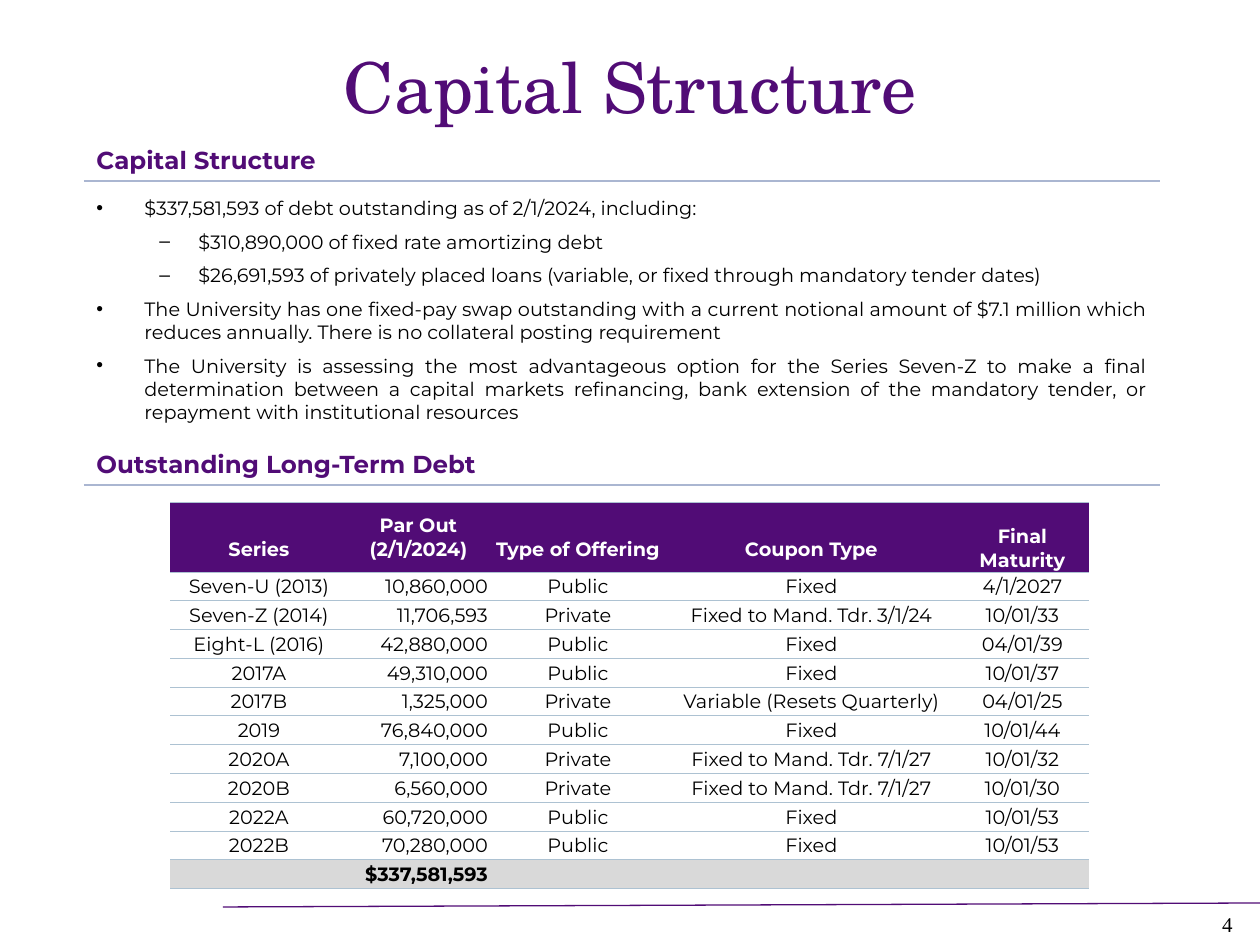
import pptx
import pptx.util
import pptx.dml.color
import pptx.enum.shapes
import pptx.enum.text
from lxml import etree
from pptx.oxml.ns import qn

SCALE = 914400 / 126
PURPLE, BLACK, WHITE = "510C76", "000000", "FFFFFF"
RULE, BORDER, GREY = "AAB6D1", "ADC2D2", "D9D9D9"
SANS = "Montserrat"
PLAIN = "{2D5ABB26-0587-4C30-8999-92F81FD0307C}"  # table style without lines
ALIGN = pptx.enum.text.PP_ALIGN
ANCHOR = pptx.enum.text.MSO_ANCHOR
LEFT, WIDE = 84, 1076

# Mark, start of text, hanging indent
LEVELS = [("•", 48, -48), ("–", 102, -39)]
POINTS = [
    (0, "$337,581,593 of debt outstanding as of 2/1/2024, including:"),
    (1, "$310,890,000 of fixed rate amortizing debt"),
    (1, "$26,691,593 of privately placed loans (variable, or fixed through "
        "mandatory tender dates)"),
    (0, "The University has one fixed-pay swap outstanding with a current "
        "notional amount of $7.1 million which reduces annually. There is no "
        "collateral posting requirement"),
    (0, "The University is assessing the most advantageous option for the "
        "Series Seven-Z to make a final determination between a capital "
        "markets refinancing, bank extension of the mandatory tender, or "
        "repayment with institutional resources"),
]

HEADS = ["Series", "Par Out (2/1/2024)", "Type of Offering", "Coupon Type",
         "Final Maturity"]
DEBT = [
    ["Seven-U (2013)", "10,860,000", "Public", "Fixed", "4/1/2027"],
    ["Seven-Z (2014)", "11,706,593", "Private", "Fixed to Mand. Tdr. 3/1/24",
     "10/01/33"],
    ["Eight-L (2016)", "42,880,000", "Public", "Fixed", "04/01/39"],
    ["2017A", "49,310,000", "Public", "Fixed", "10/01/37"],
    ["2017B", "1,325,000", "Private", "Variable (Resets Quarterly)",
     "04/01/25"],
    ["2019", "76,840,000", "Public", "Fixed", "10/01/44"],
    ["2020A", "7,100,000", "Private", "Fixed to Mand. Tdr. 7/1/27",
     "10/01/32"],
    ["2020B", "6,560,000", "Private", "Fixed to Mand. Tdr. 7/1/27",
     "10/01/30"],
    ["2022A", "60,720,000", "Public", "Fixed", "10/01/53"],
    ["2022B", "70,280,000", "Public", "Fixed", "10/01/53"],
]
TOTAL = ["", "$337,581,593", "", "", ""]
COLS = [178, 141, 178, 289, 133]
TOP, TALL, HEAD = 502, 387, 70


def px(n):
    return pptx.util.Emu(round(n * SCALE))


def rgb(code):
    return pptx.dml.color.RGBColor.from_string(code)


def write(para, text, size=11, face=SANS, color=BLACK, bold=False,
          align=ALIGN.LEFT):
    para.alignment = align
    if not text:
        end = etree.SubElement(para._p, qn("a:endParaRPr"))
        end.set("sz", str(size * 100))
        return
    run = para.add_run()
    run.text = text
    run.font.size = pptx.util.Pt(size)
    run.font.name = face
    run.font.bold = bold
    run.font.color.rgb = rgb(color)


def box(slide, x, y, w, h, anchor=ANCHOR.TOP):
    frame = slide.shapes.add_textbox(px(x), px(y), px(w), px(h)).text_frame
    frame.word_wrap = True
    frame.vertical_anchor = anchor
    return frame


def line(slide, x1, y1, x2, y2, color):
    rule = slide.shapes.add_connector(
        pptx.enum.shapes.MSO_CONNECTOR.STRAIGHT, px(x1), px(y1), px(x2), px(y2))
    rule.line.color.rgb = rgb(color)
    rule.line.width = pptx.util.Pt(0.75)
    etree.SubElement(rule._element.spPr, qn("a:effectLst"))


def section(slide, text, y):
    frame = box(slide, LEFT, y, WIDE, 42, ANCHOR.BOTTOM)
    frame.margin_right = 0
    write(frame.paragraphs[0], text, size=14, color=PURPLE, bold=True)
    line(slide, LEFT, y + 42, LEFT + WIDE, y + 42, RULE)


def bullet(para, level):
    mark, start, hang = LEVELS[level]
    props = para._p.get_or_add_pPr()
    props.set("marL", str(px(start)))
    props.set("indent", str(px(hang)))
    etree.SubElement(props, qn("a:buFont")).set("typeface", "Arial")
    etree.SubElement(props, qn("a:buChar")).set("char", mark)
    para.level = level


def points(slide):
    frame = box(slide, LEFT, 190, WIDE, 223)
    for i, (level, text) in enumerate(POINTS):
        para = frame.add_paragraph() if i else frame.paragraphs[0]
        bullet(para, level)
        if i:
            para.space_before = pptx.util.Pt(6)
        write(para, text, align=ALIGN.JUSTIFY)


def edge(cell, side):
    ln = etree.SubElement(cell._tc.get_or_add_tcPr(), qn("a:" + side), w="6350")
    fill = etree.SubElement(ln, qn("a:solidFill"))
    etree.SubElement(fill, qn("a:srgbClr"), val=BORDER)


def fill(cell, text, back, low=0, anchor=ANCHOR.MIDDLE, **style):
    edge(cell, "lnT")
    edge(cell, "lnB")
    cell.fill.solid()
    cell.fill.fore_color.rgb = rgb(back)
    cell.margin_left = cell.margin_right = cell.margin_top = px(1)
    cell.margin_bottom = px(low)
    cell.vertical_anchor = anchor
    write(cell.text_frame.paragraphs[0], text, **style)


def table(slide):
    rows = [HEADS] + DEBT + [TOTAL]
    grid = slide.shapes.add_table(len(rows), len(COLS), px(170), px(TOP),
                                  px(sum(COLS)), px(TALL)).table
    grid._tbl.tblPr.find(qn("a:tableStyleId")).text = PLAIN
    for col, width in zip(grid.columns, COLS):
        col.width = px(width)
    for r, texts in enumerate(rows):
        grid.rows[r].height = px(HEAD if r == 0 else (TALL - HEAD) / (len(rows) - 1))
        for c, text in enumerate(texts):
            cell = grid.cell(r, c)
            if r == 0:
                low = 0 if text == "Final Maturity" else 11
                fill(cell, text, PURPLE, low, ANCHOR.BOTTOM, color=WHITE,
                     bold=True, align=ALIGN.CENTER)
            else:
                last = texts is TOTAL
                fill(cell, text, GREY if last else WHITE, bold=last,
                     align=ALIGN.RIGHT if c == 1 else ALIGN.CENTER)


def title(slide, text):
    head = slide.shapes.title
    head.left, head.top, head.width, head.height = map(px, (63, 38, 1134, 96))
    head.text_frame.vertical_anchor = ANCHOR.MIDDLE
    write(head.text_frame.paragraphs[0], text, size=40,
          face="TeX Gyre Schola", color=PURPLE, align=ALIGN.CENTER)


def main():
    deck = pptx.Presentation()
    deck.slide_width, deck.slide_height = px(1260), px(945)
    slide = deck.slides.add_slide(deck.slide_layouts[5])

    # Footer rule, title and page number
    line(slide, 223, 907, 1260, 903, PURPLE)
    title(slide, "Capital Structure")
    write(box(slide, 1160, 905, 85, 32).paragraphs[0], "4", size=12,
          face="Times New Roman", align=ALIGN.RIGHT)

    # Sections with their content
    section(slide, "Capital Structure", 139)
    points(slide)
    section(slide, "Outstanding Long-Term Debt", 443)
    table(slide)

    deck.save("out.pptx")


if __name__ == "__main__":
    main()
